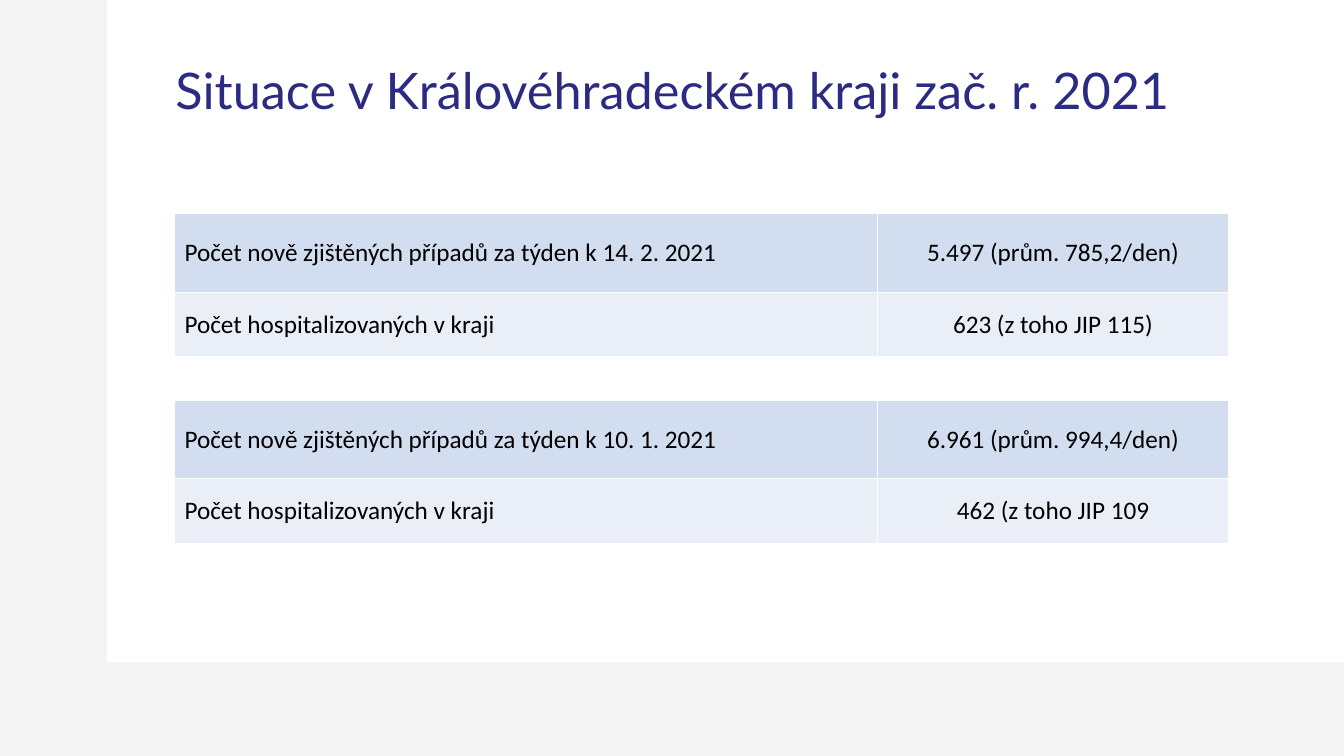
"""Build the slide on the regional situation in early 2021."""
from lxml import etree
from pptx import Presentation
from pptx.dml.color import RGBColor
from pptx.enum import shapes, text
from pptx.oxml import ns
from pptx.util import Inches, Pt

WHITE = RGBColor(0xFF, 0xFF, 0xFF)
GREY = RGBColor(0xF4, 0xF4, 0xF4)
NAVY = RGBColor(0x2B, 0x2B, 0x82)
BLACK = RGBColor(0, 0, 0)
BANDS = [RGBColor(0xD2, 0xDE, 0xEF), RGBColor(0xEA, 0xEF, 0xF7)]

COLS = [6.97, 3.49]
ROWS = [0.78, 0.64]
SIDES = ["a:lnL", "a:lnR", "a:lnT", "a:lnB"]
WEEKS = [
    [["Počet nově zjištěných případů za týden k 14. 2. 2021", "5.497 (prům. 785,2/den)"],
     ["Počet hospitalizovaných v kraji", "623 (z toho JIP 115)"]],
    [["Počet nově zjištěných případů za týden k 10. 1. 2021", "6.961 (prům. 994,4/den)"],
     ["Počet hospitalizovaných v kraji", "462 (z toho JIP 109"]],
]


def style(para, font, size, color, align):
    """Format a paragraph and its runs."""
    para.alignment = align
    for run in para.runs:
        run.font.name = font
        run.font.size = Pt(size)
        run.font.color.rgb = color


def add_panel(slide, left, top, width, height):
    """Lay the white panel over the grey ground."""
    ground = slide.background.fill
    ground.solid()
    ground.fore_color.rgb = GREY
    panel = slide.shapes.add_shape(
        shapes.MSO_SHAPE.RECTANGLE,
        Inches(left), Inches(top), Inches(width), Inches(height))
    panel.shadow.inherit = False
    panel.fill.solid()
    panel.fill.fore_color.rgb = WHITE
    panel.line.fill.background()


def add_title(slide, left, top, width, height):
    """Write the centred title."""
    box = slide.shapes.add_textbox(
        Inches(left), Inches(top), Inches(width), Inches(height))
    frame = box.text_frame
    frame.word_wrap = True
    frame.vertical_anchor = text.MSO_ANCHOR.MIDDLE
    frame.text = "Situace v Královéhradeckém kraji zač. r. 2021"
    para = frame.paragraphs[0]
    para.line_spacing = 0.9
    style(para, "Lato", 36, NAVY, text.PP_ALIGN.CENTER)


def set_edges(cell):
    """Draw thin white borders on every side of a cell."""
    props = cell._tc.get_or_add_tcPr()
    for spot, side in enumerate(SIDES):
        line = etree.Element(ns.qn(side), w=str(Pt(1)))
        fill = etree.SubElement(line, ns.qn("a:solidFill"))
        etree.SubElement(fill, ns.qn("a:srgbClr"), val=str(WHITE))
        props.insert(spot, line)


def add_week(slide, left, top, data):
    """Place one week's table."""
    table = slide.shapes.add_table(
        len(ROWS), len(COLS), Inches(left), Inches(top),
        Inches(sum(COLS)), Inches(sum(ROWS))).table
    table.first_row = False
    table.horz_banding = False
    for col, width in zip(table.columns, COLS):
        col.width = Inches(width)
    aligns = [text.PP_ALIGN.LEFT, text.PP_ALIGN.CENTER]
    for r, (row, height) in enumerate(zip(table.rows, ROWS)):
        row.height = Inches(height)
        for cell, words, align in zip(row.cells, data[r], aligns):
            cell.text_frame.text = words
            cell.vertical_anchor = text.MSO_ANCHOR.MIDDLE
            style(cell.text_frame.paragraphs[0], "Calibri", 18, BLACK, align)
            cell.fill.solid()
            cell.fill.fore_color.rgb = BANDS[r]
            set_edges(cell)


def main():
    """Build and save the deck."""
    deck = Presentation()
    deck.slide_width = Inches(13.33)
    deck.slide_height = Inches(7.5)
    slide = deck.slides.add_slide(deck.slide_layouts[6])
    add_panel(slide, 1.06, 0, 12.27, 6.57)
    add_title(slide, 0.92, 0.4, 11.5, 1.05)
    for n, data in enumerate(WEEKS):
        add_week(slide, 1.73, 2.12 + 1.85 * n, data)
    deck.save("out.pptx")


if __name__ == "__main__":
    main()
